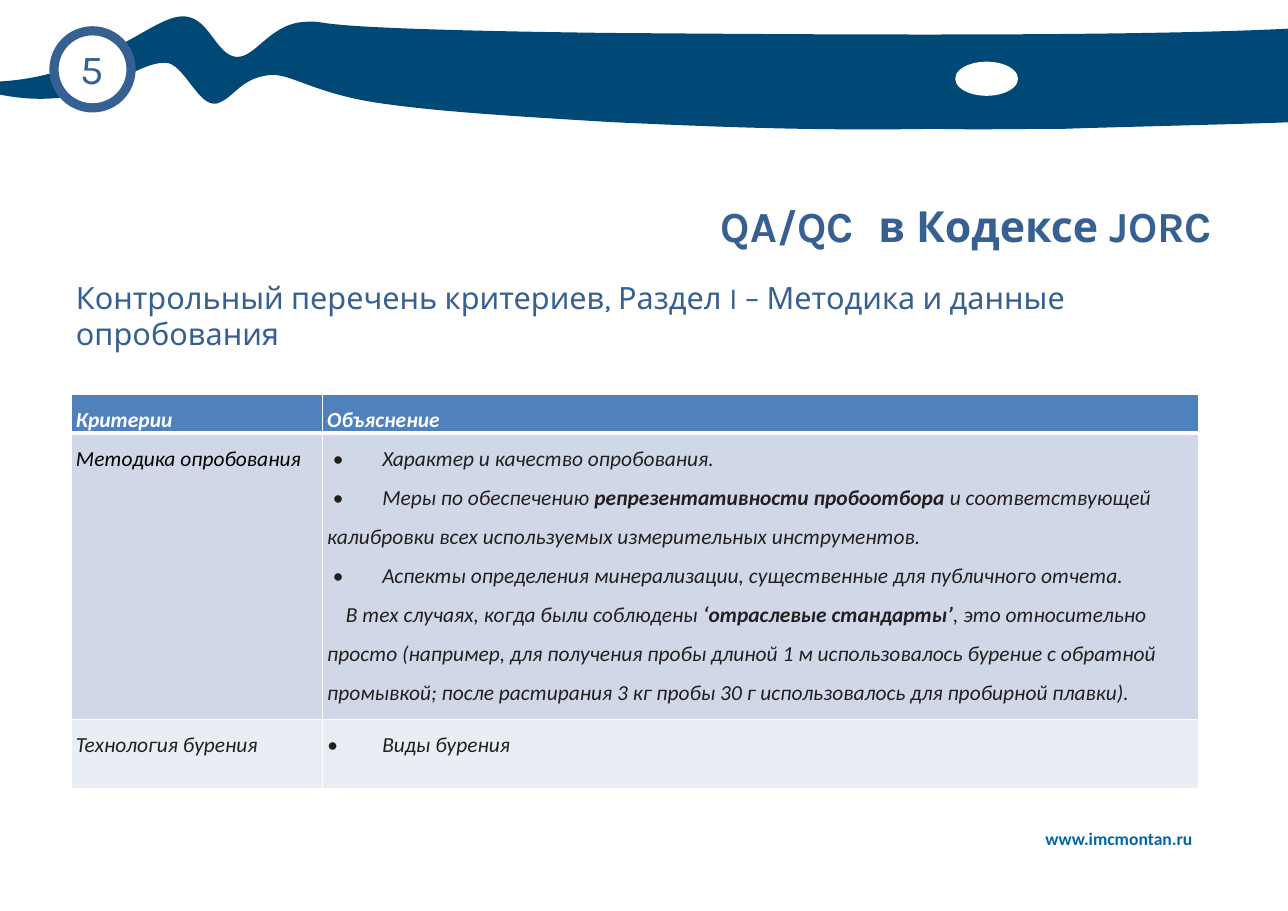
import pptx
import pptx.dml.color
import pptx.enum.shapes
import pptx.enum.text
import pptx.oxml
import pptx.oxml.ns
import pptx.util

Inches, Pt = pptx.util.Inches, pptx.util.Pt
RGB = pptx.dml.color.RGBColor.from_string
ALIGN = pptx.enum.text.PP_ALIGN
ANCHOR = pptx.enum.text.MSO_ANCHOR
OVAL = pptx.enum.shapes.MSO_SHAPE.OVAL
NS = pptx.oxml.ns.nsdecls("a")
qn = pptx.oxml.ns.qn

THEME = {
    "wave": RGB("004976"), "white": RGB("FFFFFF"), "accent": RGB("376092"),
    "url": RGB("0067A5"), "black": RGB("000000"), "ink": RGB("231F20"),
    "rows": [RGB("4F81BD"), RGB("D0D8E8"), RGB("E9EDF4")],
    "title": {"name": "Karla", "size": Pt(28), "bold": True},
    "subtitle": {"name": "Karla", "size": Pt(20)},
    "number": {"name": "Karla", "size": Pt(27)},
    "footer": {"name": "Calibri", "size": Pt(11.5), "bold": True},
    "cell": {"name": "Calibri", "size": Pt(14), "italic": True},
}


def add_run(p, text, style, color, **extra):
    r = p.add_run()
    r.text = text
    for key, value in {**style, **extra}.items():
        setattr(r.font, key, value)
    r.font.color.rgb = color
    return r


def style_shape(sp, fill, line=None, width=0):
    sp.shadow.inherit = False
    sp.fill.solid()
    sp.fill.fore_color.rgb = fill
    if line is None:
        sp.line.fill.background()
    else:
        sp.line.color.rgb = line
        sp.line.width = Pt(width)


prs = pptx.Presentation()
prs.slide_width, prs.slide_height = Inches(11.69), Inches(8.27)
s = prs.slides.add_slide(prs.slide_layouts[6])

# Header wave: each row is a Bezier segment (two controls, end point)
curves = [
    [(0, 0.77), (0, 0.79), (0, 0.74)],
    [(0.88, 0.69), (1.36, 0.17), (1.64, 0.15)],
    [(1.88, 0.13), (1.94, 0.45), (2.11, 0.51)],
    [(2.3, 0.57), (2.42, 0.23), (2.75, 0.2)],
    [(3.1, 0.18), (2.43, 0.26), (5.54, 0.3)],
    [(7.03, 0.31), (10.13, 0.34), (11.71, 0.26)],
    [(11.72, 0.5), (11.7, 1.11), (11.7, 1.11)],
    [(11.56, 1.12), (9.9, 1.16), (9.66, 1.17)],
    [(9.25, 1.17), (8.87, 1.18), (8.48, 1.17)],
    [(7.35, 1.19), (6.44, 1.15), (5.56, 1.11)],
    [(4.73, 1.06), (4.06, 1.02), (3.54, 0.95)],
    [(2.89, 0.87), (2.67, 0.68), (2.47, 0.68)],
    [(2.18, 0.7), (2.13, 0.89), (1.97, 0.94)],
    [(1.8, 0.98), (1.67, 0.57), (1.5, 0.57)],
    [(1.17, 0.57), (0.87, 1.03), (0, 0.86)],
]
builder = s.shapes.build_freeform(Inches(0), Inches(0.86))
builder.add_line_segments([(Inches(x), Inches(y)) for curve in curves for x, y in curve])
wave = builder.convert_to_shape()
style_shape(wave, THEME["wave"])

# Join every three straight segments into one curve
segments = list(wave._element.iter(qn("a:lnTo")))
for i in range(0, len(segments), 3):
    bezier = pptx.oxml.parse_xml(f"<a:cubicBezTo {NS}/>")
    segments[i].addprevious(bezier)
    for segment in segments[i:i + 3]:
        bezier.append(segment[0])
        segment.getparent().remove(segment)

# Plain emblem and number badge
emblem = s.shapes.add_shape(OVAL, Inches(8.67), Inches(0.56), Inches(0.57), Inches(0.31))
style_shape(emblem, THEME["white"])
badge = s.shapes.add_shape(OVAL, Inches(0.49), Inches(0.28), Inches(0.7), Inches(0.7))
style_shape(badge, THEME["white"], THEME["accent"], 6)

# Text boxes: runs, place, side inset, style, colour, alignment, anchor
texts = [
    (["www.imcmontan.ru"], (9.39, 7.47, 1.72, 0.29), 0.1, "footer", "url",
     ALIGN.LEFT, ANCHOR.TOP),
    (["5"], (0.29, 0.34, 1.09, 0.56), 0.1, "number", "accent", ALIGN.CENTER, ANCHOR.TOP),
    (["Контрольный перечень критериев, Раздел I – Методика и данные опробования"],
     (0.58, 2.48, 10.53, 5.2), 0.11, "subtitle", "accent", ALIGN.LEFT, ANCHOR.TOP),
    (["QA/QC", " ", "в Кодексе JORC"], (0.58, 1.46, 10.53, 1.18), 0.11, "title", "accent",
     ALIGN.RIGHT, ANCHOR.MIDDLE),
]
for runs, box, inset, style, color, align, anchor in texts:
    tf = s.shapes.add_textbox(*map(Inches, box)).text_frame
    tf.word_wrap = True
    tf.vertical_anchor = anchor
    tf.margin_left = tf.margin_right = Inches(inset)
    p = tf.paragraphs[0]
    p.alignment = align
    for text in runs:
        r = add_run(p, text, THEME[style], THEME[color])
        if text == " ":  # wide gap in the title
            r._r.get_or_add_rPr().set("spc", "900")

# Criteria table: a paragraph is (first-line indent, tab stop, runs);
# every second run is bold
rows = [
    [[(0, 0, ["Критерии"])], [(0, 0, ["Объяснение"])]],
    [[(0, 0, ["Методика опробования"])],
     [(0.05, 0.18, ["•\tХарактер и качество опробования."]),
      (0.05, 0.18, ["•\tМеры по обеспечению ", "репрезентативности пробоотбора ",
                    "и соответствующей калибровки всех используемых измерительных "
                    "инструментов."]),
      (0.05, 0.27, ["•\tАспекты определения минерализации, существенные для "
                    "публичного отчета."]),
      (0.17, 0, ["В тех случаях, когда были соблюдены ", "‘отраслевые стандарты’",
                 ", это относительно просто (например, для получения пробы длиной 1 м "
                 "использовалось бурение с обратной промывкой; после растирания 3 кг "
                 "пробы 30 г использовалось для пробирной плавки)."])]],
    [[(0, 0, ["Технология бурения"])], [(0, 0.18, ["•\tВиды бурения"])]],
]
widths, heights = [2.28, 7.95], [0.33, 2.6, 0.63]
table = s.shapes.add_table(3, 2, Inches(0.65), Inches(3.58),
                           Inches(sum(widths)), Inches(sum(heights))).table
table.horz_banding = False
for column, width in zip(table.columns, widths):
    column.width = Inches(width)
for row, height in zip(table.rows, heights):
    row.height = Inches(height)

for i, row in enumerate(rows):
    for j, paragraphs in enumerate(row):
        cell = table.cell(i, j)
        for side, margin in {"left": 0.04, "right": 0, "top": 0, "bottom": 0}.items():
            setattr(cell, "margin_" + side, Inches(margin))
        # Borders, heavier on both sides of the line under the header
        tcPr = cell._tc.get_or_add_tcPr()
        for side in "LRTB":
            heavy = (i, side) in ((0, "B"), (1, "T"))
            tcPr.append(pptx.oxml.parse_xml(
                f'<a:ln{side} {NS} w="{Pt(3 if heavy else 1)}">'
                f'<a:solidFill><a:srgbClr val="{THEME["white"]}"/></a:solidFill></a:ln{side}>'))
        cell.fill.solid()
        cell.fill.fore_color.rgb = THEME["rows"][i]
        color = THEME["white"] if i == 0 else THEME["black"] if (i, j) == (1, 0) else THEME["ink"]
        tf = cell.text_frame
        for n, (indent, tab, runs) in enumerate(paragraphs):
            p = tf.add_paragraph() if n else tf.paragraphs[0]
            p.line_spacing = 1.5
            pPr = p._p.get_or_add_pPr()
            pPr.set("marL", "0")
            pPr.set("indent", str(Inches(indent)))
            if tab:
                pPr.append(pptx.oxml.parse_xml(
                    f'<a:tabLst {NS}><a:tab pos="{Inches(tab)}" algn="l"/></a:tabLst>'))
            for k, text in enumerate(runs):
                add_run(p, text, THEME["cell"], color, bold=i == 0 or k % 2 == 1)

prs.save("out.pptx")
